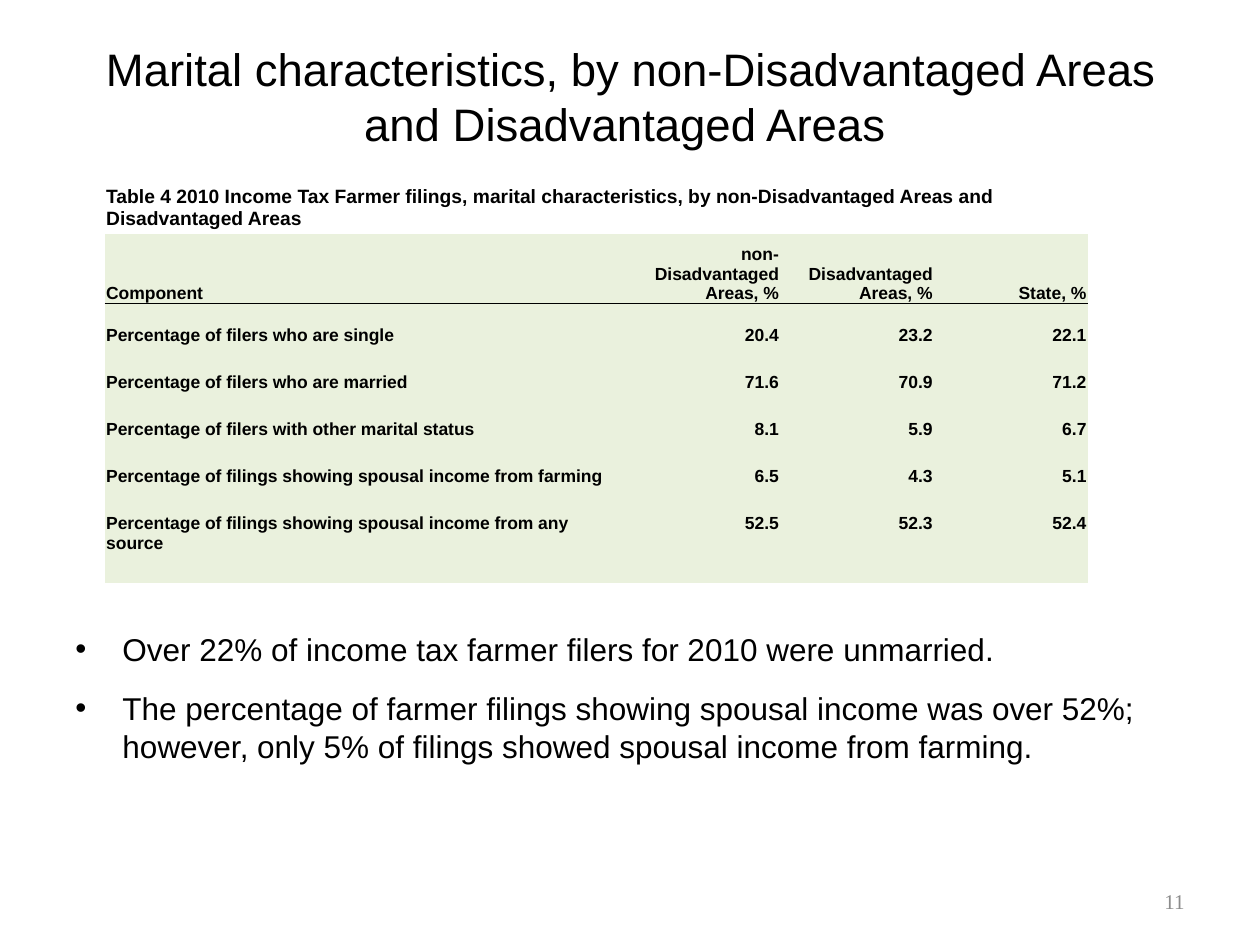
"""Build the slide on marital characteristics of farmer tax filers."""
from lxml import etree
from pptx import Presentation
from pptx.dml.color import RGBColor
from pptx.enum.text import MSO_ANCHOR, PP_ALIGN
from pptx.oxml.ns import qn
from pptx.util import Cm, Pt

LEFT, CENTER, RIGHT = PP_ALIGN.LEFT, PP_ALIGN.CENTER, PP_ALIGN.RIGHT
TOP, MIDDLE, BOTTOM = MSO_ANCHOR.TOP, MSO_ANCHOR.MIDDLE, MSO_ANCHOR.BOTTOM
COLORS = {"text": "000000", "number": "8C8C8C", "band": "EAF1DD"}
NO_STYLE = "{2D5ABB26-0587-4C30-8999-92F81FD0307C}"


def write(para, text, size, align=LEFT, color="text", name="Arial", bold=False):
    para.text = text
    para.alignment = align
    for span in para.runs:
        for key, value in {"size": Pt(size), "name": name, "bold": bold}.items():
            setattr(span.font, key, value)
        span.font.color.rgb = RGBColor.from_string(COLORS[color])


def add_box(page, left, top, width, height, anchor):
    frame = page.shapes.add_textbox(Cm(left), Cm(top), Cm(width), Cm(height)).text_frame
    frame.word_wrap = True
    frame.vertical_anchor = anchor
    return frame


deck = Presentation()
deck.slide_width, deck.slide_height = Cm(25.4), Cm(19.05)
page = deck.slides.add_slide(deck.slide_layouts[6])

title = add_box(page, 1.3, 0.53, 22.86, 2.8, MIDDLE)
write(title.paragraphs[0],
      "Marital characteristics, by non-Disadvantaged Areas and Disadvantaged Areas ", 26, CENTER)

findings = [
    "Over 22% of income tax farmer filers for 2010 were unmarried.",
    "The percentage of farmer filings showing spousal income was over 52%; "
    "however, only 5% of filings showed spousal income from farming.",
]
body = add_box(page, 1.27, 4.45, 22.86, 13.49, TOP)
body.margin_top = Cm(8.25)
for index, finding in enumerate(findings):
    para = body.add_paragraph() if index else body.paragraphs[0]
    write(para, finding, 18)
    para.space_before = Pt(12 if index else 0)
    properties = para._p.get_or_add_pPr()
    properties.set("marL", str(Cm(0.95)))
    properties.set("indent", str(-Cm(0.95)))
    etree.SubElement(properties, qn("a:buFont"), typeface="Arial")
    etree.SubElement(properties, qn("a:buChar"), char="•")

number = add_box(page, 18.2, 17.65, 5.93, 1.02, MIDDLE)
write(number.paragraphs[0], "11", 12, RIGHT, "number", "Times New Roman")

caption = ("Table 4 2010 Income Tax Farmer filings, marital characteristics, "
           "by non-Disadvantaged Areas and Disadvantaged Areas")
rows = [
    [caption, "", "", ""],
    ["Component", "non-\vDisadvantaged Areas, %", "Disadvantaged Areas, %", "State, %"],
    ["", "", "", ""],
    ["Percentage of filers who are single", "20.4", "23.2", "22.1"],
    ["Percentage of filers who are married", "71.6", "70.9", "71.2"],
    ["Percentage of filers with other marital status", "8.1", "5.9", "6.7"],
    ["Percentage of filings showing spousal income from farming", "6.5", "4.3", "5.1"],
    ["Percentage of filings showing spousal income from any source", "52.5", "52.3", "52.4"],
]
widths = [10.52] + [3.1] * 3
heights = [0.99, 1.4, 0.41] + [0.95] * 4 + [1.42]
table = page.shapes.add_table(len(rows), len(widths), Cm(2.11), Cm(3.73),
                              Cm(sum(widths)), Cm(sum(heights))).table
table.first_row = table.horz_banding = False
table._tbl.tblPr.find(qn("a:tableStyleId")).text = NO_STYLE
for column, width in zip(table.columns, widths):
    column.width = Cm(width)

cell_format = {"margin_left": Cm(0.03), "margin_right": Cm(0.03),
               "margin_top": Cm(0.03), "margin_bottom": Cm(0)}
for row_index, (values, height) in enumerate(zip(rows, heights)):
    table.rows[row_index].height = Cm(height)
    for column_index, value in enumerate(values):
        cell = table.cell(row_index, column_index)
        for key, setting in cell_format.items():
            setattr(cell, key, setting)
        cell.vertical_anchor = BOTTOM if row_index == 1 else TOP
        para = cell.text_frame.paragraphs[0]
        write(para, value, 10 if row_index else 11, RIGHT if column_index else LEFT, bold=True)
        if not value:
            etree.SubElement(para._p, qn("a:endParaRPr"), sz="800")
        if row_index:
            cell.fill.solid()
            cell.fill.fore_color.rgb = RGBColor.from_string(COLORS["band"])
        else:
            cell.fill.background()
        if row_index == 1:
            line = etree.Element(qn("a:lnB"), w=str(Pt(0.5)))
            paint = etree.SubElement(line, qn("a:solidFill"))
            etree.SubElement(paint, qn("a:srgbClr"), val=COLORS["text"])
            cell._tc.tcPr.insert(0, line)
table.cell(0, 0).merge(table.cell(0, len(widths) - 1))

deck.save("out.pptx")
